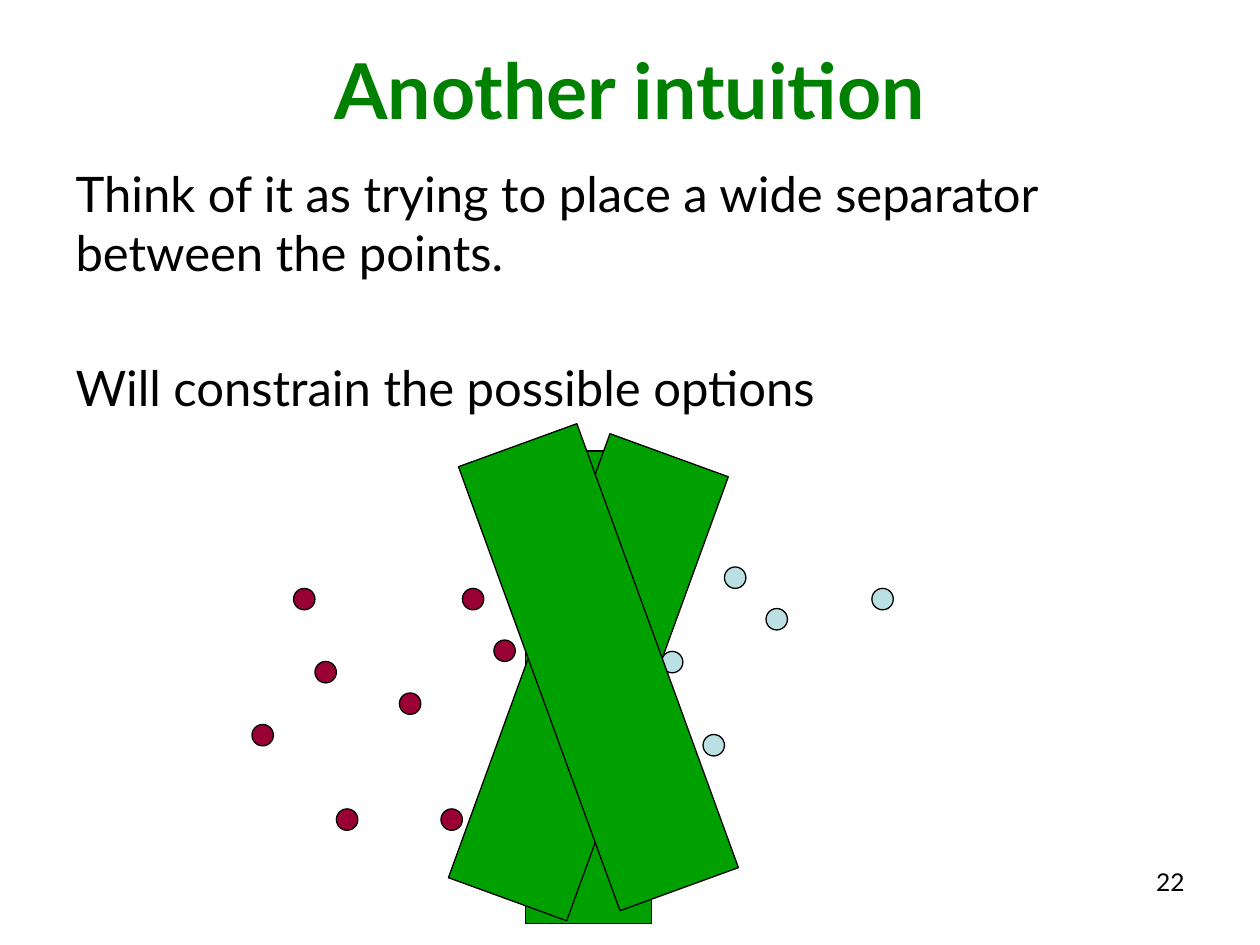
from lxml.etree import SubElement
from pptx import Presentation
from pptx.dml.color import RGBColor
from pptx.enum.shapes import MSO_SHAPE as Shape
from pptx.enum.text import MSO_ANCHOR as Anchor, MSO_AUTO_SIZE as AutoSize, PP_ALIGN as Align
from pptx.oxml.ns import qn
from pptx.util import Inches, Pt

FONT = "Lato"
COLORS = {
    "title": "008000",
    "text": "000000",
    "red": "990033",
    "blue": "BBE0E3",
    "separator": "00A000",
    "outline": "000000",
}

# Content
TITLE = "Another intuition"
BODY = [  # text, space before in points
    ("Think of it as trying to place a wide separator between the points.", 0),
    ("Will constrain the possible options", 43.5),
]
PAGE_NUMBER = "22"
POINT_SIZE = 0.17
POINTS = {  # left, top of each data point
    "red": [(2.33, 4.67), (2.5, 5.25), (2.67, 6.42), (3.67, 4.67),
            (2, 5.75), (3.17, 5.5), (3.92, 5.08), (3.5, 6.42)],
    "blue": [(5.25, 5.17), (5.58, 5.83), (5.75, 4.5), (6.92, 4.67), (6.08, 4.83)],
}
SEPARATOR_SIZE = (1, 3.75)
SEPARATORS = [(4.17, 3.58, 0), (4.17, 3.5, 20), (4.25, 3.42, 340)]  # left, top, rotation


def color(name):
    return RGBColor.from_string(COLORS[name])


def place(shape, left, top, width, height):
    shape.left, shape.top = Inches(left), Inches(top)
    shape.width, shape.height = Inches(width), Inches(height)


def add_text(paragraph, text, size, color_name="text", bold=False):
    run = paragraph.add_run()
    run.text = text
    run.font.name = FONT
    run.font.size = Pt(size)
    run.font.bold = bold
    run.font.color.rgb = color(color_name)


def add_outlined(slide, kind, box, fill, rotation=0):
    shape = slide.shapes.add_shape(kind, *map(Inches, box))
    shape.rotation = rotation
    shape.shadow.inherit = False
    shape.fill.solid()
    shape.fill.fore_color.rgb = color(fill)
    shape.line.color.rgb = color("outline")
    shape.line.width = Pt(0.75)


def main():
    presentation = Presentation()
    presentation.slide_width, presentation.slide_height = Inches(10), Inches(7.5)
    slide = presentation.slides.add_slide(presentation.slide_layouts[1])

    # Title
    title = slide.shapes.title
    place(title, 0.5, 0.08, 9, 1.25)
    title.text_frame.auto_size = AutoSize.NONE
    title.text_frame.vertical_anchor = Anchor.MIDDLE
    paragraph = title.text_frame.paragraphs[0]
    paragraph.alignment = Align.CENTER
    add_text(paragraph, TITLE, 44, "title", bold=True)

    # Body text without bullets
    body = slide.placeholders[1]
    place(body, 0.5, 1.25, 9, 4.95)
    frame = body.text_frame
    frame.auto_size = AutoSize.NONE
    frame.vertical_anchor = Anchor.TOP
    for index, (text, space) in enumerate(BODY):
        paragraph = frame.add_paragraph() if index else frame.paragraphs[0]
        paragraph.space_before = Pt(space)
        properties = paragraph._p.get_or_add_pPr()
        properties.set("marL", "0")
        properties.set("indent", "0")
        SubElement(properties, qn("a:buNone"))
        add_text(paragraph, text, 28)

    # Page number
    number = slide.shapes.add_textbox(Inches(7.17), Inches(6.83), Inches(2.33), Inches(0.52))
    number.text_frame.word_wrap = True
    paragraph = number.text_frame.paragraphs[0]
    paragraph.alignment = Align.RIGHT
    add_text(paragraph, PAGE_NUMBER, 14)

    # Data points, then the separators over them
    for group, positions in POINTS.items():
        for left, top in positions:
            add_outlined(slide, Shape.OVAL, (left, top, POINT_SIZE, POINT_SIZE), group)
    for left, top, rotation in SEPARATORS:
        add_outlined(slide, Shape.RECTANGLE, (left, top, *SEPARATOR_SIZE), "separator", rotation)

    presentation.save("out.pptx")


if __name__ == "__main__":
    main()
